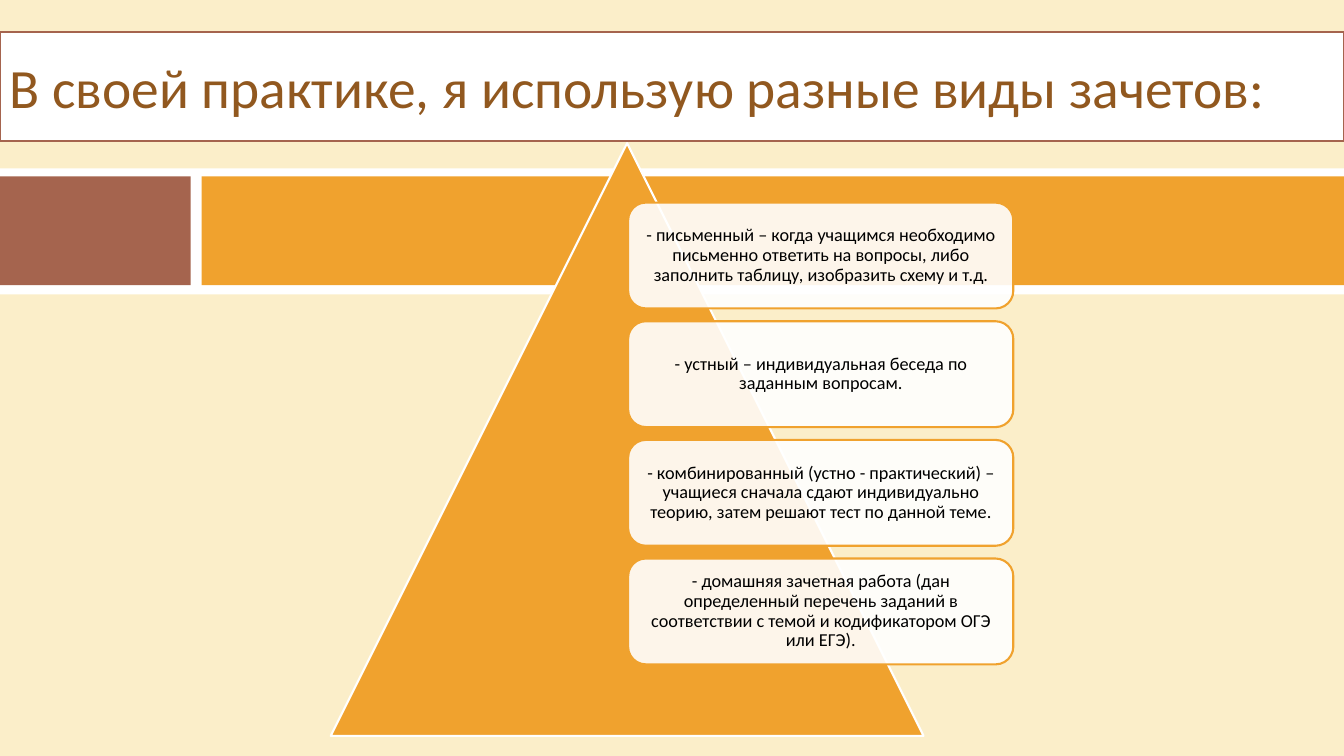
from lxml import etree
from pptx import Presentation
from pptx.dml.color import RGBColor
from pptx.enum.shapes import MSO_SHAPE as SHAPE
from pptx.enum.text import MSO_ANCHOR as ANCHOR, PP_ALIGN as ALIGN
from pptx.oxml.ns import qn
from pptx.util import Inches, Pt

WHITE, ORANGE, BROWN = "FFFFFF", "F0A22E", "A5644E"


def rgb(color):
    return RGBColor.from_string(color)


def add_block(kind, x, y, w, h, fill, line=None, text="", size=13, color="000000",
              align=ALIGN.CENTER, margin=0.05, spacing=0.9):
    """Add a filled shape with optional outline and text."""
    sp = s.shapes.add_shape(kind, Inches(x), Inches(y), Inches(w), Inches(h))
    sp.shadow.inherit = False
    sp.fill.solid()
    sp.fill.fore_color.rgb = rgb(fill)
    if line:
        sp.line.color.rgb = rgb(line)
        sp.line.width = Pt(1.5)
    else:
        sp.line.fill.background()
    if text:
        tf = sp.text_frame
        tf.word_wrap = True
        tf.vertical_anchor = ANCHOR.MIDDLE
        tf.margin_left = tf.margin_right = Inches(margin)
        tf.margin_top = tf.margin_bottom = Inches(0.05)
        p = tf.paragraphs[0]
        p.alignment = align
        p.line_spacing = spacing
        r = p.add_run()
        r.text = text
        r.font.name = "Calibri"
        r.font.size = Pt(size)
        r.font.color.rgb = rgb(color)
    return sp


prs = Presentation()
prs.slide_width, prs.slide_height = Inches(13.33), Inches(7.5)
s = prs.slides.add_slide(prs.slide_layouts[6])
s.background.fill.solid()
s.background.fill.fore_color.rgb = rgb("FBEEC9")

# Decorative band
add_block(SHAPE.RECTANGLE, 0, 1.67, 13.33, 1.25, WHITE)
add_block(SHAPE.RECTANGLE, 0, 1.75, 1.89, 1.08, BROWN)
add_block(SHAPE.RECTANGLE, 2, 1.75, 11.33, 1.08, ORANGE)

# Title
add_block(SHAPE.RECTANGLE, 0, 0.32, 13.33, 1.08, WHITE, BROWN,
          text="В своей практике, я использую разные виды зачетов:",
          size=39.6, color="91581F", align=ALIGN.LEFT, margin=0.1, spacing=1.0)

# Pyramid with the list of test types
add_block(SHAPE.ISOSCELES_TRIANGLE, 3.28, 1.42, 5.88, 5.88, ORANGE, WHITE)

test_types = [
    "- письменный – когда учащимся необходимо письменно ответить на вопросы, "
    "либо заполнить таблицу, изобразить схему и т.д.",
    "- устный – индивидуальная беседа по заданным вопросам.",
    "- комбинированный (устно - практический) – учащиеся сначала сдают "
    "индивидуально теорию, затем решают тест по данной теме.",
    "- домашняя зачетная работа (дан определенный перечень заданий в "
    "соответствии с темой и кодификатором ОГЭ или ЕГЭ).",
]
for i, test_type in enumerate(test_types):
    card = add_block(SHAPE.ROUNDED_RECTANGLE, 6.23, 2.01 + i * 1.177, 3.82, 1.05,
                     WHITE, ORANGE, text=test_type)
    fill_color = card.fill._xPr.find(qn("a:solidFill"))[0]
    etree.SubElement(fill_color, qn("a:alpha"), val="90000")

prs.save("out.pptx")
